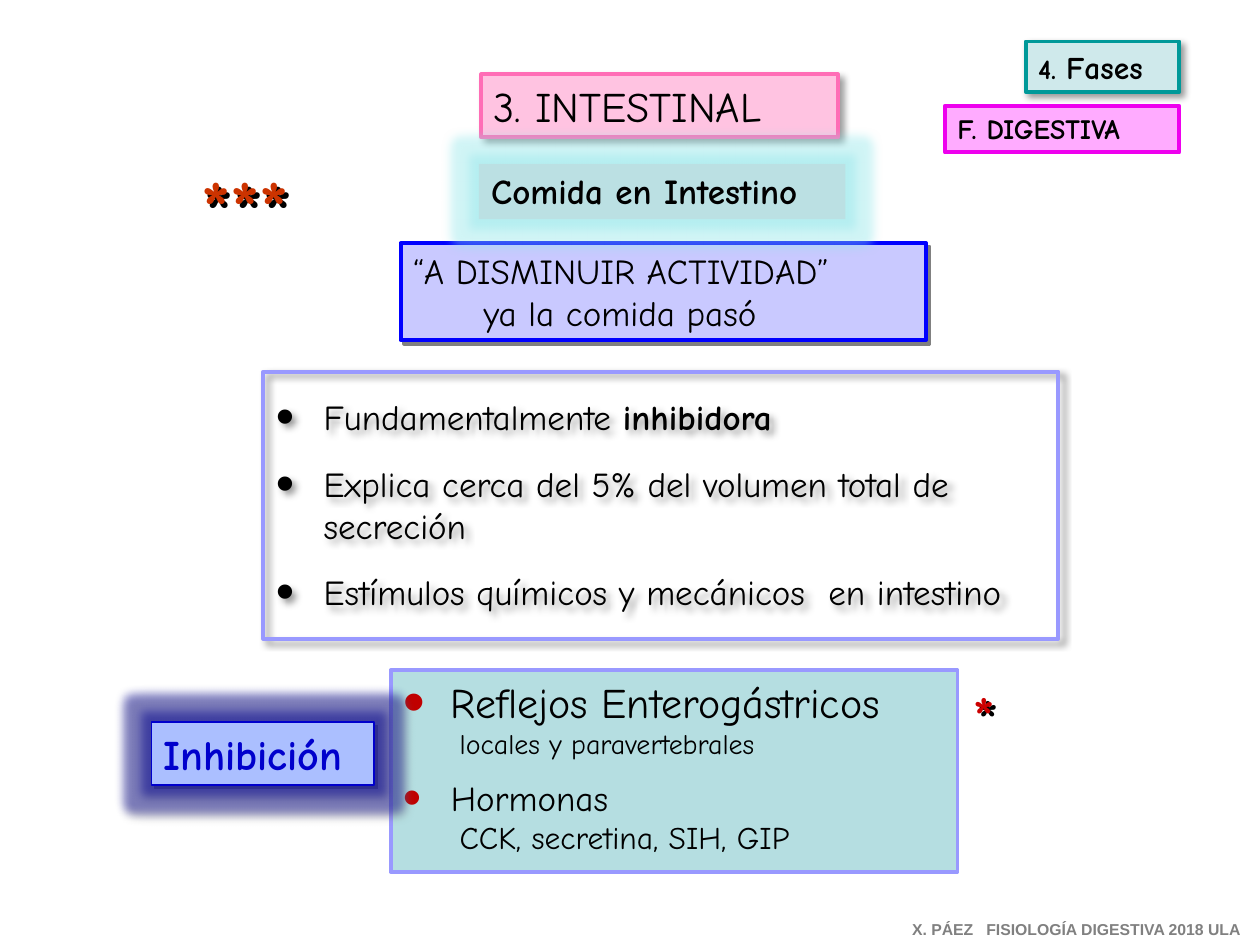
from lxml import etree
from pptx import Presentation
from pptx.dml.color import RGBColor
from pptx.enum.shapes import MSO_SHAPE
from pptx.enum.text import MSO_ANCHOR, MSO_AUTO_SIZE
from pptx.oxml.ns import qn
from pptx.util import Inches, Pt

RECTANGLE = MSO_SHAPE.RECTANGLE
TOP = MSO_ANCHOR.TOP
NO_AUTOFIT = MSO_AUTO_SIZE.NONE

BLACK = RGBColor(0x00, 0x00, 0x00)
GRAY = RGBColor(0x80, 0x80, 0x80)
RED = RGBColor(0xCC, 0x00, 0x00)
ORANGE = RGBColor(0xCC, 0x33, 0x00)
BULLET_RED = RGBColor(0xC0, 0x00, 0x00)
PINK = RGBColor(0xFF, 0xC3, 0xE1)
PINK_EDGE = RGBColor(0xFF, 0x6D, 0xB6)
MAGENTA = RGBColor(0xFF, 0xAB, 0xFF)
MAGENTA_EDGE = RGBColor(0xEE, 0x00, 0xEE)
MINT = RGBColor(0xCF, 0xE9, 0xEB)
MINT_EDGE = RGBColor(0x00, 0x99, 0x99)
AQUA = RGBColor(0xBB, 0xE0, 0xE3)
AQUA_GLOW = RGBColor(0x8E, 0xE6, 0xEA)
TEAL = RGBColor(0xB5, 0xDE, 0xE1)
LILAC = RGBColor(0xC9, 0xC9, 0xFF)
BLUE = RGBColor(0x00, 0x00, 0xFF)
PERIWINKLE = RGBColor(0x99, 0x99, 0xFF)
SKY = RGBColor(0xAB, 0xBF, 0xFF)
NAVY = RGBColor(0x00, 0x00, 0xCC)
NAVY_GLOW = RGBColor(0x00, 0x00, 0x99)

COLUMNS, ROWS = 100, 75
CELL = Inches(0.1)
FONT = "Comic Neue"

# Shadows: colour, opacity %, blur pt, distance pt
SOFT = (BLACK, 40, 4, 3)
HARD = (GRAY, 100, 0, 2.8)
INK = (BLACK, 100, 0, 2.8)


def add_color(parent, color, opacity):
    node = etree.SubElement(parent, qn("a:srgbClr"), val=str(color))
    etree.SubElement(node, qn("a:alpha"), val=str(opacity * 1000))


def add_effects(shape, shadow, glow):
    shape.shadow.inherit = False
    effects = shape._element.spPr.find(qn("a:effectLst"))
    if glow:
        halo = etree.SubElement(effects, qn("a:glow"), rad=str(Pt(11)))
        add_color(halo, glow, 40)
    if shadow:
        color, opacity, blur, distance = shadow
        outer = etree.SubElement(
            effects, qn("a:outerShdw"), blurRad=str(Pt(blur)), dist=str(Pt(distance)),
            dir=str(45 * 60000), algn="tl", rotWithShape="0")
        add_color(outer, color, opacity)


def add_box(page, region, place, fill=None, edge=None, width=2.25,
            shadow=None, glow=None, inset=0.05):
    """Add a box at a place given in grid cells from the region's corner."""
    left, top = region[0] + place[0], region[1] + place[1]
    cells = (left, top, place[2], place[3])
    shape = page.shapes.add_shape(RECTANGLE, *(round(n * CELL) for n in cells))
    for part, color in ((shape.fill, fill), (shape.line.fill, edge)):
        if color is None:
            part.background()
        else:
            part.solid()
            part.fore_color.rgb = color
    if edge is not None:
        shape.line.width = Pt(width)
    add_effects(shape, shadow, glow)
    settings = {"word_wrap": True, "auto_size": NO_AUTOFIT, "vertical_anchor": TOP,
                "margin_top": Inches(inset), "margin_bottom": 0,
                "margin_left": Inches(0.1), "margin_right": 0}
    for name, value in settings.items():
        setattr(shape.text_frame, name, value)
    return shape.text_frame


def add_para(frame, spans, before=0, indent=0, bullet=None):
    """Fill the first paragraph or add one; a span is (text, format values)."""
    first = frame.paragraphs[0]
    para = frame.add_paragraph() if first.runs else first
    para.alignment = 1
    para.space_before = Pt(before)
    layout = para._p.get_or_add_pPr()
    layout.set("marL", str(Inches(indent)))
    if bullet is not None:
        layout.set("indent", str(-Inches(indent)))
        add = etree.SubElement
        add_fill = add(layout, qn("a:buClr"))
        add(add_fill, qn("a:srgbClr"), val=str(bullet))
        add(layout, qn("a:buSzPct"), val="150000")
        add(layout, qn("a:buFont"), typeface="Arial")
        add(layout, qn("a:buChar"), char="•")
    for text, style in spans:
        span = para.add_run()
        span.text = text
        values = {"name": FONT, "bold": False, "color": BLACK} | style
        span.font.color.rgb = values.pop("color")
        for name, value in values.items():
            setattr(span.font, name, value)


def style(size, bold=False, **extra):
    return {"size": Pt(size), "bold": bold, **extra}


def add_section_tags(page, region):
    frame = add_box(page, region, (6.4, 0, 12.2, 4), MINT, MINT_EDGE, shadow=SOFT)
    add_para(frame, [("4. ", style(16, True)), ("Fases", style(18, True))])
    frame = add_box(page, region, (0, 5.1, 18.6, 3.7), MAGENTA, MAGENTA_EDGE)
    add_para(frame, [("F. DIGESTIVA", style(16, True))])


def add_heading(page, region):
    frame = add_box(page, region, (23.2, 0, 28.3, 5), PINK, PINK_EDGE, shadow=SOFT)
    add_para(frame, [("3. INTESTINAL", style(24))])
    frame = add_box(page, region, (16.8, 13.4, 41.7, 7.7), LILAC, BLUE, shadow=HARD)
    add_para(frame, [("“A DISMINUIR ACTIVIDAD”", style(20))])
    add_para(frame, [("ya la comida pasó", style(20))], indent=0.56)
    frame = add_box(page, region, (23, 7.1, 29.1, 4.4), AQUA, glow=AQUA_GLOW)
    add_para(frame, [("Comida en Intestino", style(20, True))])
    frame = add_box(page, region, (0, 6.2, 11.8, 8.4), shadow=INK)
    add_para(frame, [("***", style(44, True, color=ORANGE))])


def add_features(page, region):
    frame = add_box(page, region, (0, 0, 63.1, 21.2), edge=PERIWINKLE,
                    shadow=SOFT, inset=0.19)
    features = [
        [("Fundamentalmente ", style(20)), ("inhibidora", style(20, True))],
        [("Explica cerca del 5% del volumen total de secreción", style(20))],
        [("Estímulos químicos y mecánicos  en intestino", style(20))],
    ]
    for number, spans in enumerate(features):
        add_para(frame, spans, before=14 if number else 0, indent=0.38, bullet=BLACK)


def add_inhibition(page, region):
    # Mechanisms, each with a detail line below
    frame = add_box(page, region, (19, 0, 45, 16), TEAL, PERIWINKLE)
    mechanisms = [
        ("Reflejos Enterogástricos", 24, "locales y paravertebrales", 16, 0),
        ("Hormonas", 20, "CCK, secretina, SIH, GIP", 18, 9),
    ]
    for title, title_size, detail, detail_size, before in mechanisms:
        add_para(frame, [(title, style(title_size))], before, 0.38, BULLET_RED)
        add_para(frame, [(detail, style(detail_size))], indent=0.45)
    # Label and mark on either side
    frame = add_box(page, region, (0, 4.1, 17.7, 5), SKY, NAVY, 0.75, HARD, NAVY_GLOW)
    add_para(frame, [("Inhibición", style(24, True, color=NAVY))])
    frame = add_box(page, region, (64.3, 0.3, 4.4, 6.3), shadow=INK)
    add_para(frame, [("*", style(32, True, color=RED))])


def add_footer(page, region):
    credit = style(9, True, name="Arial", color=GRAY)
    for text, place in (("X. PÁEZ", (0, 0, 6, 2.5)),
                        ("FISIOLOGÍA DIGESTIVA 2018 ULA", (5.9, 0, 22.7, 2.5))):
        add_para(add_box(page, region, place), [(text, credit)])


def main():
    deck = Presentation()
    deck.slide_width, deck.slide_height = COLUMNS * CELL, ROWS * CELL
    page = deck.slides.add_slide(deck.slide_layouts[6])
    # Corner of each region, in columns and rows
    add_inhibition(page, (12, 53.2))
    add_heading(page, (15, 5.9))
    add_features(page, (20.9, 29.5))
    add_section_tags(page, (75, 3.3))
    add_footer(page, (71.4, 72.5))
    deck.save("out.pptx")


if __name__ == "__main__":
    main()
